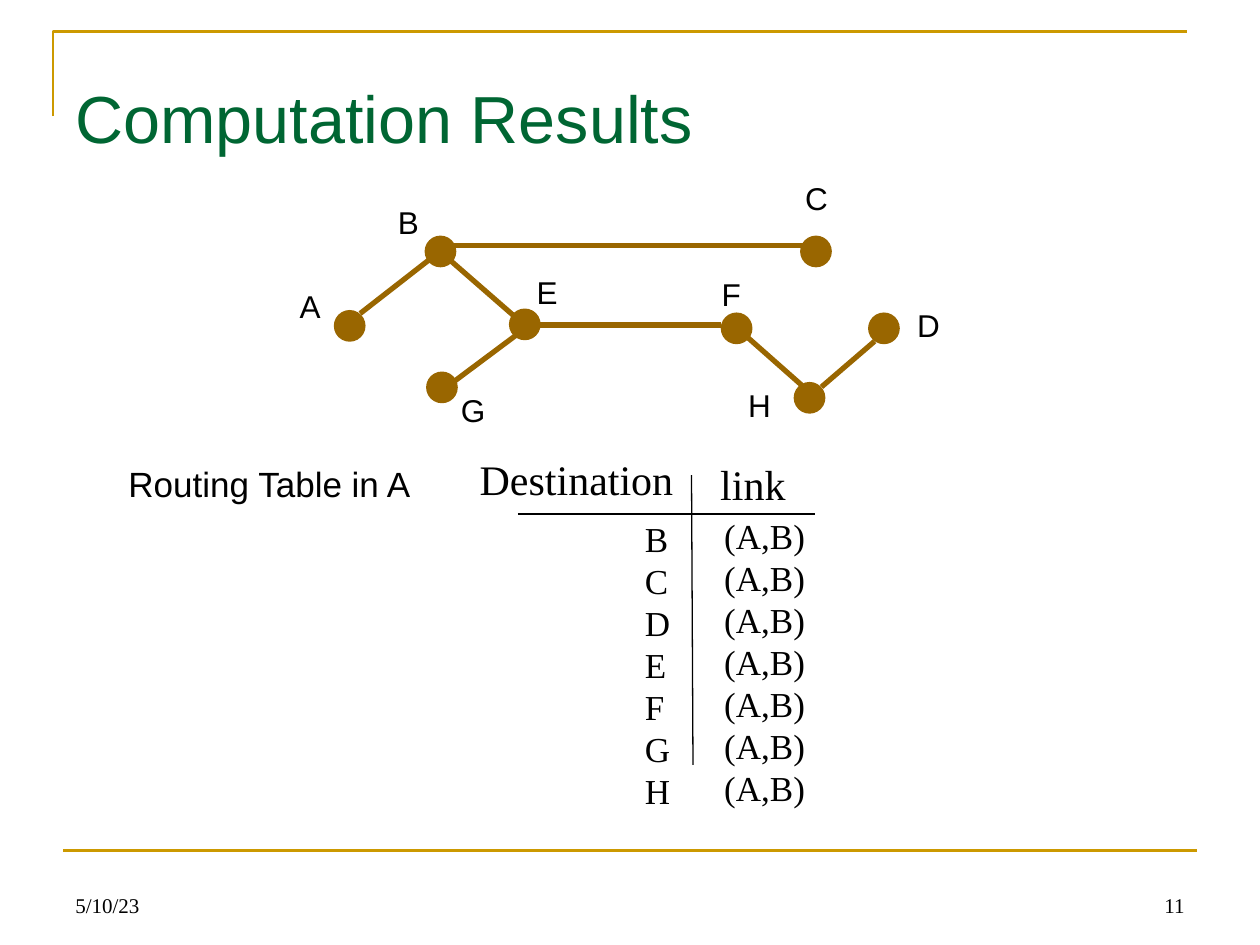
from lxml.etree import SubElement
from pptx import Presentation
from pptx.dml.color import RGBColor
from pptx.enum.shapes import MSO_CONNECTOR, MSO_SHAPE
from pptx.enum.text import MSO_ANCHOR, PP_ALIGN
from pptx.oxml.ns import qn
from pptx.util import Cm, Pt

GOLD, BROWN, GREEN, BLACK = "CC9900", "996600", "006633", "000000"
SANS, SERIF = "Arial", "Times New Roman"
NODE_SIZE = 0.64

NODES = {
    "A": ((6.73, 6.25), (5.79, 5.66)),
    "B": ((8.56, 4.75), (7.77, 3.96)),
    "C": ((16.13, 4.75), (15.98, 3.48)),
    "D": ((17.5, 6.3), (18.24, 6.05)),
    "E": ((10.26, 6.22), (10.57, 5.38)),
    "F": ((14.53, 6.3), (14.3, 5.41)),
    "G": ((8.59, 7.49), (9.04, 7.75)),
    "H": ((16, 7.7), (14.83, 7.65)),
}
LINKS = [
    ((7.26, 6.32), (8.66, 5.23)),
    ((10.34, 6.35), (9.09, 5.26)),
    ((9.14, 7.7), (10.44, 6.73)),
    ((10.87, 6.55), (14.53, 6.55)),
    ((14.99, 6.73), (16.28, 7.87)),
    ((16.56, 7.8), (17.63, 6.88)),
    ((9.14, 4.95), (16.21, 4.95)),
]


def color(value):
    """Turn a hex string into a colour."""
    return RGBColor.from_string(value)


def write_text(frame, text, size=18, font=SANS, fill=BLACK,
               align=PP_ALIGN.LEFT, spacing=None):
    """Write the lines of a text as formatted paragraphs."""
    for index, line in enumerate(text.split("\n")):
        paragraph = frame.add_paragraph() if index else frame.paragraphs[0]
        paragraph.alignment = align
        if spacing:
            paragraph.line_spacing = Pt(spacing)
        run = paragraph.add_run()
        run.text = line
        run.font.size = Pt(size)
        run.font.name = font
        run.font.color.rgb = color(fill)


class RoutingSlide:
    """Hold the style and the current slide."""

    def __init__(self, presentation):
        """Add a blank slide."""
        self.slide = presentation.slides.add_slide(presentation.slide_layouts[6])
        self.shapes = self.slide.shapes

    def text(self, text, left, top, width, height, wrap=True,
             anchor=MSO_ANCHOR.TOP, **style):
        """Add a text box."""
        shape = self.shapes.add_textbox(Cm(left), Cm(top), Cm(width), Cm(height))
        frame = shape.text_frame
        frame.word_wrap = wrap
        frame.vertical_anchor = anchor
        write_text(frame, text, **style)

    def line(self, start, end, stroke, weight):
        """Add a straight line."""
        points = [Cm(value) for value in (*start, *end)]
        connector = self.shapes.add_connector(MSO_CONNECTOR.STRAIGHT, *points)
        connector.line.color.rgb = color(stroke)
        connector.line.width = Pt(weight)
        SubElement(connector._element.spPr, qn("a:effectLst"))

    def corner(self, points, stroke, weight):
        """Add an open outline through the points."""
        start, *others = [(Cm(x), Cm(y)) for x, y in points]
        builder = self.shapes.build_freeform(*start)
        builder.add_line_segments(others, close=False)
        shape = builder.convert_to_shape()
        shape.shadow.inherit = False
        shape.fill.background()
        shape.line.color.rgb = color(stroke)
        shape.line.width = Pt(weight)

    def node(self, left, top):
        """Add a network node."""
        shape = self.shapes.add_shape(MSO_SHAPE.OVAL, Cm(left), Cm(top),
                                      Cm(NODE_SIZE), Cm(NODE_SIZE))
        shape.shadow.inherit = False
        shape.fill.solid()
        shape.fill.fore_color.rgb = color(BROWN)
        shape.line.fill.background()


def main():
    """Build the slide and save it."""
    presentation = Presentation()
    presentation.slide_width, presentation.slide_height = Cm(25.4), Cm(19.05)
    page = RoutingSlide(presentation)

    page.corner([(1.07, 2.34), (1.07, 0.64), (23.93, 0.64)], GOLD, 1.5)
    page.line((1.27, 17.15), (24.13, 17.15), GOLD, 1.5)
    page.text("Computation Results", 1.27, 0.76, 22.86, 3.18,
              anchor=MSO_ANCHOR.MIDDLE, size=38, fill=GREEN)

    page.line((13.94, 9.58), (13.97, 15.42), BLACK, 0.75)
    page.line((10.44, 10.36), (16.43, 10.36), BLACK, 0.75)
    destinations = [name for name in NODES if name != "A"]
    column = {"wrap": False, "size": 20, "font": SERIF, "spacing": 24}
    page.text("\n".join(destinations), 12.75, 10.31, 1.02, 6.17, **column)
    page.text("\n".join(["(A,B)"] * len(destinations)),
              14.35, 10.24, 2.13, 6.17, **column)
    heading = {"wrap": False, "size": 24, "font": SERIF}
    page.text("Destination", 9.42, 9.02, 4.42, 1.27, **heading)
    page.text("link", 14.27, 9.12, 1.83, 1.27, **heading)

    for position, _ in NODES.values():
        page.node(*position)
    for start, end in LINKS:
        page.line(start, end, BROWN, 3)
    for name, (_, position) in NODES.items():
        page.text(name, *position, 1.09, 1.02)

    page.text("Routing Table in A", 2.34, 9.19, 6.32, 1.09, wrap=False, size=20)
    footer = {"anchor": MSO_ANCHOR.BOTTOM, "size": 12, "font": SERIF}
    page.text("5/10/23", 1.27, 17.35, 5.92, 1.27, **footer)
    page.text("11", 18.21, 17.35, 5.92, 1.27, align=PP_ALIGN.RIGHT, **footer)

    presentation.save("out.pptx")


if __name__ == "__main__":
    main()
